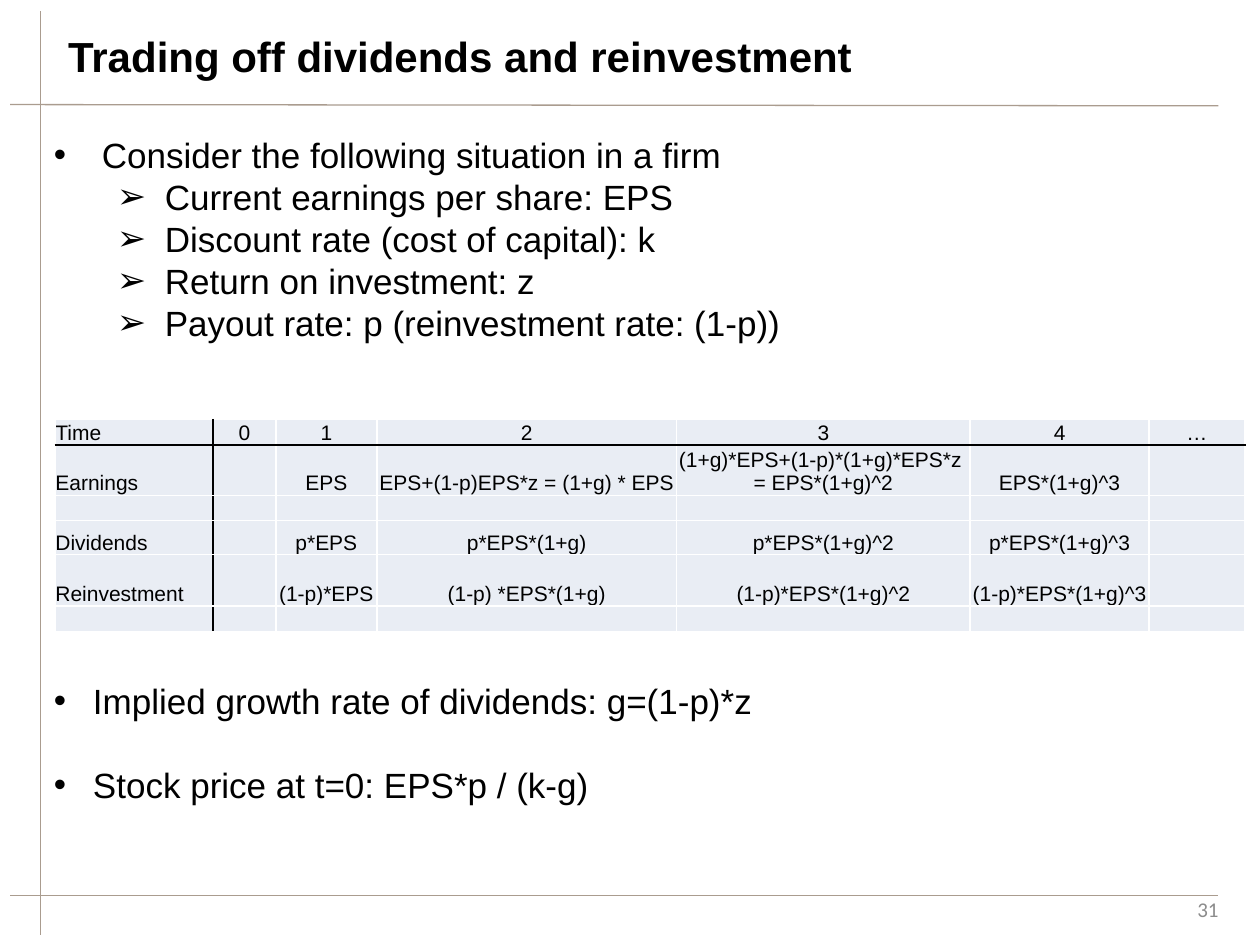
from typing import NamedTuple

from lxml import etree
from pptx import Presentation
from pptx import util as u
from pptx.dml.color import RGBColor
from pptx.enum import shapes, text
from pptx.oxml import ns

BLACK = RGBColor(0x00, 0x00, 0x00)
WHITE = RGBColor(0xFF, 0xFF, 0xFF)
RULE = RGBColor(0xAA, 0x9C, 0x8F)
PAGE_GREY = RGBColor(0x8C, 0x8C, 0x8C)
CELL_FILL = RGBColor(0xE9, 0xED, 0xF4)
BODY_SIZE = 20
LINE_PITCH = 24
TABLE_SIZE = 12


class Rule(NamedTuple):
    x1: float
    y1: float
    x2: float
    y2: float


class Bullet(NamedTuple):
    words: str
    mark: str = "•"
    level: int = 0
    margin: float = 0.38
    hanging: float = 0.38
    lines_before: int = 0


RULES = [
    Rule(0.32, 0.09, 0.32, 7.42),
    Rule(0.08, 0.83, 9.67, 0.84),
    Rule(0.08, 7.11, 9.67, 7.11),
]

ASSUMPTIONS = [
    "Current earnings per share: EPS",
    "Discount rate (cost of capital): k",
    "Return on investment: z",
    "Payout rate: p (reinvestment rate: (1-p))",
]

BULLETS = [
    Bullet("Consider the following situation in a firm"),
    *(Bullet(words, "➢", 1, 0.88) for words in ASSUMPTIONS),
    Bullet("Implied growth rate of dividends: g=(1-p)*z",
           margin=0.31, hanging=0.31, lines_before=8),
    Bullet("Stock price at t=0: EPS*p / (k-g)",
           margin=0.31, hanging=0.31, lines_before=1),
]

COLUMN_WIDTHS = [1.25, 0.5, 0.8, 2.38, 2.33, 1.42, 0.76]
ROW_HEIGHTS = [0.2, 0.4, 0.2, 0.27, 0.41, 0.2]
CASH_FLOWS = [
    ["Time", "0", "1", "2", "3", "4", "…"],
    ["Earnings", "", "EPS", "EPS+(1-p)EPS*z = (1+g) * EPS",
     "(1+g)*EPS+(1-p)*(1+g)*EPS*z \n= EPS*(1+g)^2", "EPS*(1+g)^3", ""],
    [""] * 7,
    ["Dividends", "", "p*EPS", "p*EPS*(1+g)", "p*EPS*(1+g)^2", "p*EPS*(1+g)^3", ""],
    ["Reinvestment", "", "(1-p)*EPS", "(1-p) *EPS*(1+g)",
     "(1-p)*EPS*(1+g)^2", "(1-p)*EPS*(1+g)^3", ""],
    [""] * 7,
]


def add_run(paragraph, words: str, size: float, color: RGBColor = BLACK,
            font: str = "Arial", bold: bool = False) -> None:
    run = paragraph.add_run()
    run.text = words
    run.font.size = u.Pt(size)
    run.font.name = font
    run.font.bold = bold
    run.font.color.rgb = color


def add_rule(slide, rule: Rule) -> None:
    line = slide.shapes.add_connector(
        shapes.MSO_CONNECTOR.STRAIGHT, *(u.Inches(v) for v in rule))
    line.line.color.rgb = RULE
    line.line.width = u.Pt(0.75)
    etree.SubElement(line._element.spPr, ns.qn("a:effectLst"))


def add_title(slide, words: str) -> None:
    title = slide.shapes.title
    title.left, title.top = u.Inches(0.44), u.Inches(0.19)
    title.width, title.height = u.Inches(7.65), u.Inches(0.5)
    frame = title.text_frame
    frame.vertical_anchor = text.MSO_ANCHOR.TOP
    frame.auto_size = text.MSO_AUTO_SIZE.SHAPE_TO_FIT_TEXT
    frame.paragraphs[0].alignment = text.PP_ALIGN.LEFT
    add_run(frame.paragraphs[0], words, 24, bold=True)


def add_text_box(slide, left: float, top: float, width: float, height: float):
    box = slide.shapes.add_textbox(*(u.Inches(v) for v in (left, top, width, height)))
    box.text_frame.word_wrap = True
    return box.text_frame


def format_bullet(paragraph, bullet: Bullet) -> None:
    paragraph.level = bullet.level
    paragraph.line_spacing = u.Pt(LINE_PITCH)
    if bullet.lines_before:
        paragraph.space_before = u.Pt(bullet.lines_before * LINE_PITCH)
    props = paragraph._p.get_or_add_pPr()
    props.set("marL", str(u.Inches(bullet.margin)))
    props.set("indent", str(-u.Inches(bullet.hanging)))
    color = etree.SubElement(props, ns.qn("a:buClr"))
    etree.SubElement(color, ns.qn("a:srgbClr"), val=str(BLACK))
    etree.SubElement(props, ns.qn("a:buFont"), typeface="Arial")
    etree.SubElement(props, ns.qn("a:buChar"), char=bullet.mark)


def add_bullets(slide, bullets: list[Bullet]) -> None:
    frame = add_text_box(slide, 0.33, 1.01, 9.44, 4.92)
    for i, bullet in enumerate(bullets):
        paragraph = frame.add_paragraph() if i else frame.paragraphs[0]
        format_bullet(paragraph, bullet)
        add_run(paragraph, bullet.words, BODY_SIZE)


def set_borders(cell, row: int, column: int) -> None:
    """Black under the header row and right of the label column, white elsewhere."""
    black_sides = {"L": column == 1, "R": column == 0, "T": row == 1, "B": row == 0}
    props = cell._tc.get_or_add_tcPr()
    for side, is_black in black_sides.items():
        border = etree.SubElement(props, ns.qn(f"a:ln{side}"), w=str(u.Pt(1)))
        fill = etree.SubElement(border, ns.qn("a:solidFill"))
        etree.SubElement(fill, ns.qn("a:srgbClr"), val=str(BLACK if is_black else WHITE))


def fill_cell(cell, words: str, row: int, column: int) -> None:
    set_borders(cell, row, column)
    cell.fill.solid()
    cell.fill.fore_color.rgb = CELL_FILL
    cell.margin_left = cell.margin_right = cell.margin_top = cell.margin_bottom = 0
    cell.vertical_anchor = text.MSO_ANCHOR.BOTTOM
    frame = cell.text_frame
    for i, line in enumerate(words.split("\n")):
        paragraph = frame.add_paragraph() if i else frame.paragraphs[0]
        paragraph.alignment = text.PP_ALIGN.CENTER if column else text.PP_ALIGN.LEFT
        if line:
            add_run(paragraph, line, TABLE_SIZE)
        else:
            etree.SubElement(paragraph._p, ns.qn("a:endParaRPr"), sz=str(TABLE_SIZE * 100))


def add_cash_flow_table(slide) -> None:
    table = slide.shapes.add_table(
        len(ROW_HEIGHTS), len(COLUMN_WIDTHS), u.Inches(0.44), u.Inches(3.33),
        u.Inches(sum(COLUMN_WIDTHS)), u.Inches(sum(ROW_HEIGHTS))).table
    table.first_row = table.horz_banding = False
    for column, width in zip(table.columns, COLUMN_WIDTHS):
        column.width = u.Inches(width)
    for row, height in zip(table.rows, ROW_HEIGHTS):
        row.height = u.Inches(height)
    for r, values in enumerate(CASH_FLOWS):
        for c, words in enumerate(values):
            fill_cell(table.cell(r, c), words, r, c)


def add_page_number(slide, number: str) -> None:
    frame = add_text_box(slide, 7.44, 7.08, 2.33, 0.27)
    frame.vertical_anchor = text.MSO_ANCHOR.MIDDLE
    frame.paragraphs[0].alignment = text.PP_ALIGN.RIGHT
    add_run(frame.paragraphs[0], number, 12, PAGE_GREY, "Calibri")


def main() -> None:
    deck = Presentation()
    deck.slide_width, deck.slide_height = u.Inches(10), u.Inches(7.5)
    slide = deck.slides.add_slide(deck.slide_layouts.get_by_name("Title Only"))
    for rule in RULES:
        add_rule(slide, rule)
    add_page_number(slide, "31")
    add_title(slide, "Trading off dividends and reinvestment")
    add_bullets(slide, BULLETS)
    add_cash_flow_table(slide)
    deck.save("out.pptx")


if __name__ == "__main__":
    main()
